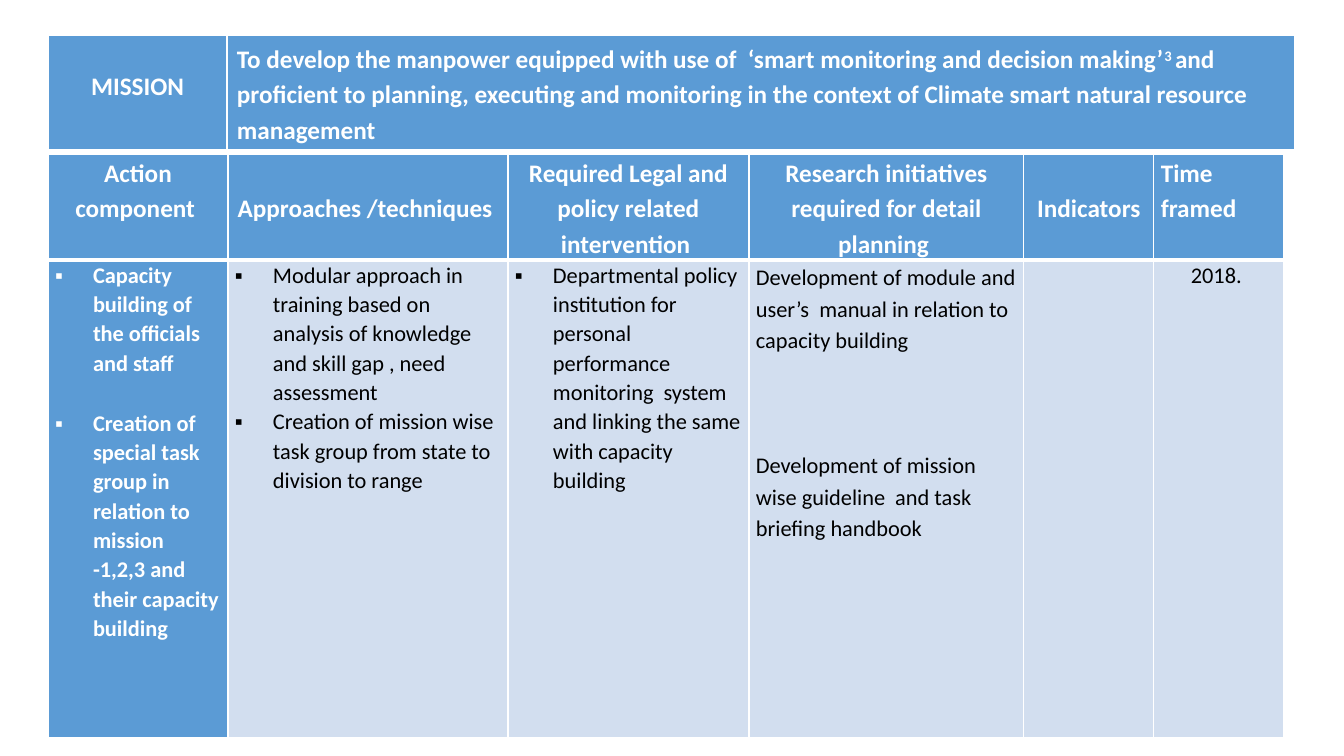
from dataclasses import dataclass

from lxml import etree
from pptx import Presentation
from pptx import util as u
from pptx.dml.color import RGBColor
from pptx.enum import text
from pptx.oxml import ns

PX = 914400 / 100.8
WHITE = RGBColor(0xFF, 0xFF, 0xFF)
BLACK = RGBColor(0x00, 0x00, 0x00)
BLUE = RGBColor(0x5B, 0x9B, 0xD5)
PALE_BLUE = RGBColor(0xD2, 0xDE, 0xEF)
FONT = "Calibri"
SUPERSCRIPT_MARK = "^"  # encloses raised text
CENTER = text.PP_ALIGN.CENTER
LEFT = text.PP_ALIGN.LEFT


def px(length: int) -> u.Emu:
    return u.Emu(round(length * PX))


@dataclass(frozen=True)
class CellStyle:
    fill: RGBColor
    color: RGBColor
    size: int
    bold: bool
    top_border: int
    bottom_border: int
    side_margin: int
    bottom_margin: int


@dataclass(frozen=True)
class CellText:
    paragraphs: tuple[str, ...] = ()
    align: text.PP_ALIGN = LEFT
    line_spacing: float = 1.15
    gap: int = 0
    top_margin: int = 0
    bulleted: bool = False


@dataclass(frozen=True)
class Row:
    height: int
    cells: tuple[tuple[CellText, CellStyle], ...]


@dataclass(frozen=True)
class Grid:
    left: int
    top: int
    columns: tuple[int, ...]
    rows: tuple[Row, ...]


# Cell styles
MISSION = CellStyle(BLUE, WHITE, 18, True, 1, 3, 10, 5)
HEADER = CellStyle(BLUE, WHITE, 18, True, 1, 3, 7, 0)
ACTION = CellStyle(BLUE, WHITE, 16, True, 3, 1, 7, 0)
BODY = CellStyle(PALE_BLUE, BLACK, 16, False, 3, 1, 7, 0)

# Content
mission_row = Row(114, (
    (CellText(("MISSION",), CENTER, 1.0, top_margin=36), MISSION),
    (CellText((
        "To develop the manpower equipped with use of  ‘smart monitoring and "
        "decision making’^3 ^and proficient to planning, executing and monitoring "
        "in the context of Climate smart natural resource management",),
        top_margin=5), MISSION),
))
header_row = Row(105, (
    (CellText(("Action component ",), CENTER), HEADER),
    (CellText(("Approaches /techniques ",), CENTER, top_margin=35), HEADER),
    (CellText(("Required Legal and policy related intervention ",), CENTER), HEADER),
    (CellText(("Research initiatives required for detail planning ",), CENTER), HEADER),
    (CellText(("Indicators",), CENTER, top_margin=35), HEADER),
    (CellText(("Time framed",)), HEADER),
))
plan_row = Row(477, (
    (CellText((
        "Capacity building of the officials and staff",
        "Creation of special task group in relation to mission -1,2,3 and "
        "their capacity building"), LEFT, 1.07, gap=22, bulleted=True), ACTION),
    (CellText((
        "Modular approach in training based on analysis of knowledge and "
        "skill gap , need assessment",
        "Creation of mission wise task group from state to division to range"),
        LEFT, 1.07, bulleted=True), BODY),
    (CellText((
        "Departmental policy institution for personal  performance monitoring  "
        "system and linking the same with capacity building",),
        LEFT, 1.07, bulleted=True), BODY),
    (CellText((
        "Development of module and user’s  manual in relation to capacity building",
        "Development of mission wise guideline  and task briefing handbook"),
        gap=67), BODY),
    (CellText(), BODY),
    (CellText(("2018. ",), CENTER, 1.07), BODY),
))
GRIDS = (
    Grid(48, 154, (180, 280, 241, 275, 130, 130), (header_row, plan_row)),
    Grid(48, 35, (179, 1068), (mission_row,)),
)


def set_borders(cell, style: CellStyle) -> None:
    properties = cell._tc.get_or_add_tcPr()
    widths = {"lnL": 1, "lnR": 1, "lnT": style.top_border, "lnB": style.bottom_border}
    for side, width in widths.items():
        line = etree.SubElement(properties, ns.qn(f"a:{side}"), w=str(u.Pt(width)))
        fill = etree.SubElement(line, ns.qn("a:solidFill"))
        etree.SubElement(fill, ns.qn("a:srgbClr"), val=str(WHITE))


def add_bullet(paragraph) -> None:
    properties = paragraph._p.get_or_add_pPr()
    properties.set("marL", str(px(38)))
    properties.set("indent", str(-px(38)))
    etree.SubElement(properties, ns.qn("a:buFont"), typeface="Wingdings")
    properties[-1].set("typeface", "Arial")
    etree.SubElement(properties, ns.qn("a:buChar"), char="▪")


def add_runs(paragraph, content: str, style: CellStyle) -> None:
    for index, part in enumerate(content.split(SUPERSCRIPT_MARK)):
        run = paragraph.add_run()
        run.text = part
        run.font.name = FONT
        run.font.size = u.Pt(style.size)
        run.font.bold = style.bold
        run.font.color.rgb = style.color
        if index % 2:
            run.font._element.set("baseline", "30000")


def fill_cell(cell, content: CellText, style: CellStyle) -> None:
    set_borders(cell, style)
    cell.fill.solid()
    cell.fill.fore_color.rgb = style.fill
    cell.vertical_anchor = text.MSO_ANCHOR.TOP
    cell.margin_left = cell.margin_right = px(style.side_margin)
    cell.margin_top = px(content.top_margin)
    cell.margin_bottom = px(style.bottom_margin)
    for index, words in enumerate(content.paragraphs):
        frame = cell.text_frame
        paragraph = frame.add_paragraph() if index else frame.paragraphs[0]
        paragraph.alignment = content.align
        paragraph.line_spacing = content.line_spacing
        paragraph.space_before = u.Pt(content.gap if index else 0)
        if content.bulleted:
            add_bullet(paragraph)
        add_runs(paragraph, words, style)


def draw_grid(slide, grid: Grid) -> None:
    width = sum(grid.columns)
    height = sum(row.height for row in grid.rows)
    table = slide.shapes.add_table(
        len(grid.rows), len(grid.columns),
        px(grid.left), px(grid.top), px(width), px(height)).table
    for column, column_width in zip(table.columns, grid.columns):
        column.width = px(column_width)
    for table_row, row in zip(table.rows, grid.rows):
        table_row.height = px(row.height)
        for cell, (content, style) in zip(table_row.cells, row.cells):
            fill_cell(cell, content, style)


def main() -> None:
    presentation = Presentation()
    presentation.slide_width = px(1344)
    presentation.slide_height = px(756)
    slide = presentation.slides.add_slide(presentation.slide_layouts[6])
    for grid in GRIDS:
        draw_grid(slide, grid)
    presentation.save("out.pptx")


if __name__ == "__main__":
    main()
